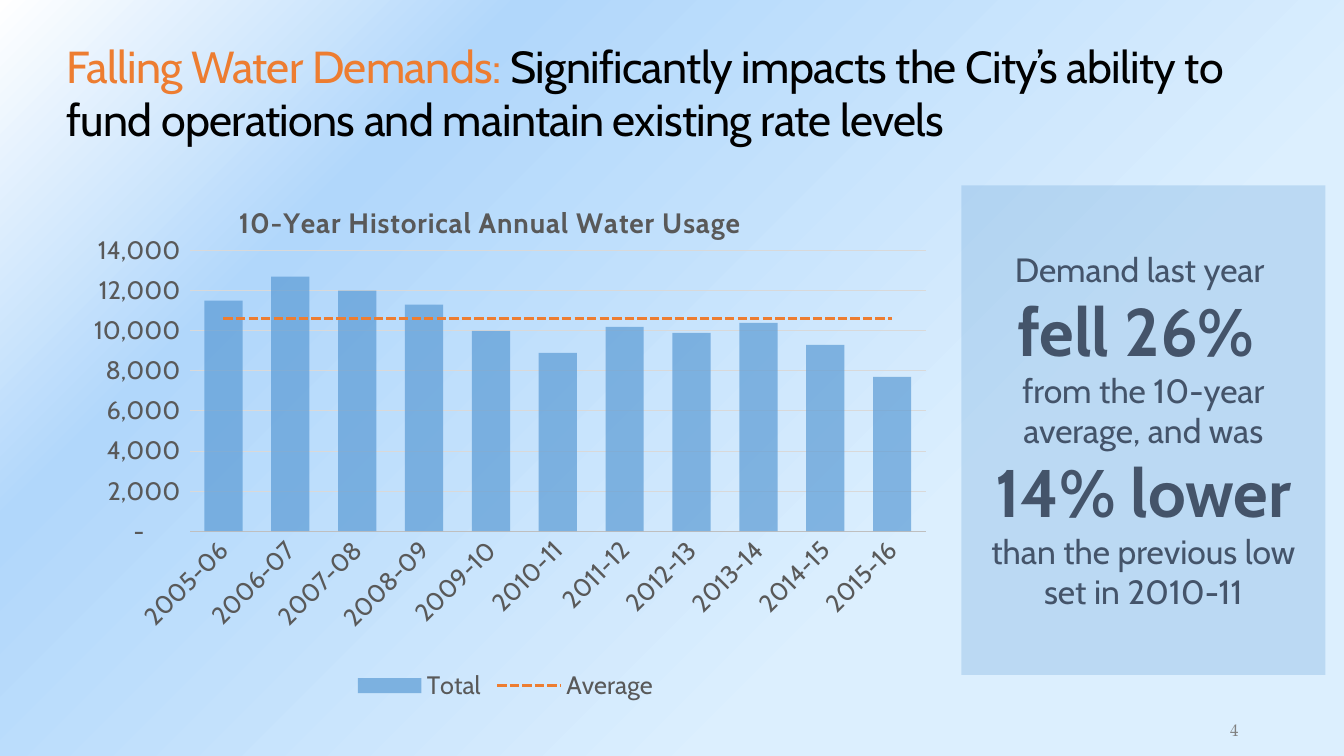
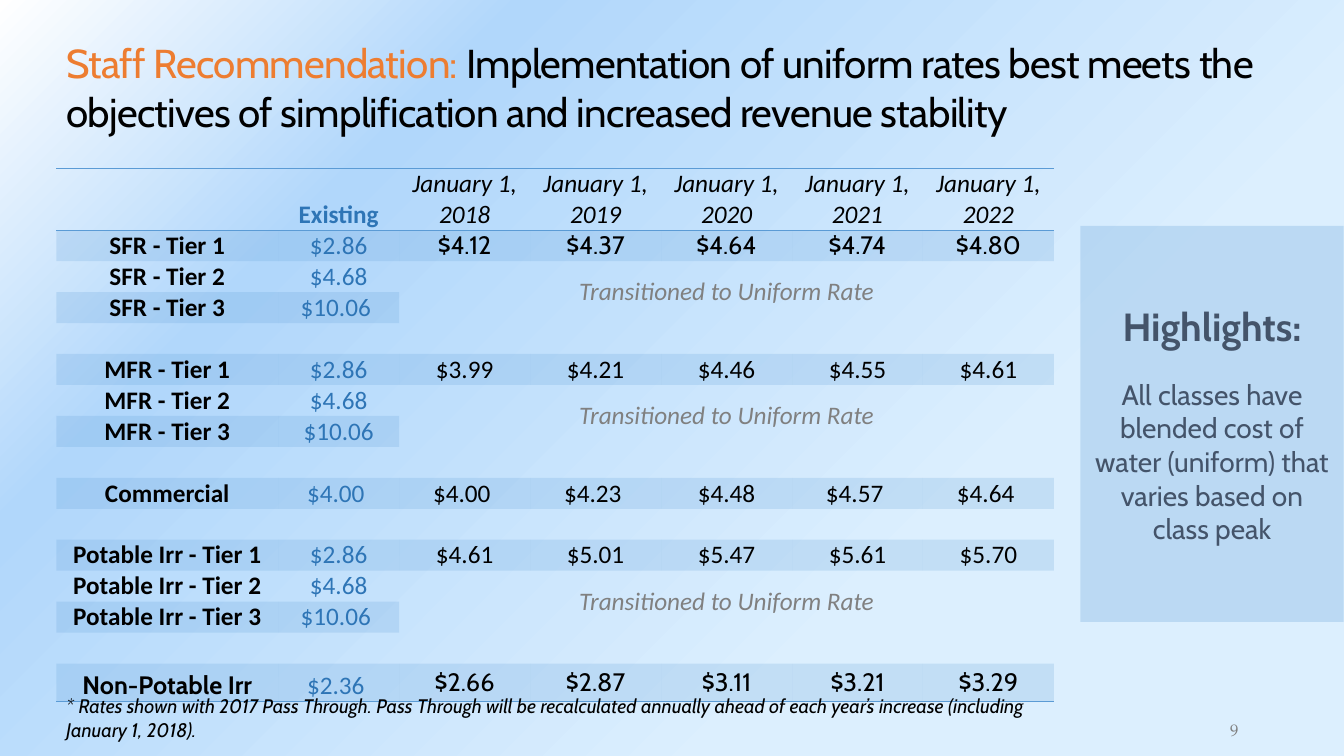
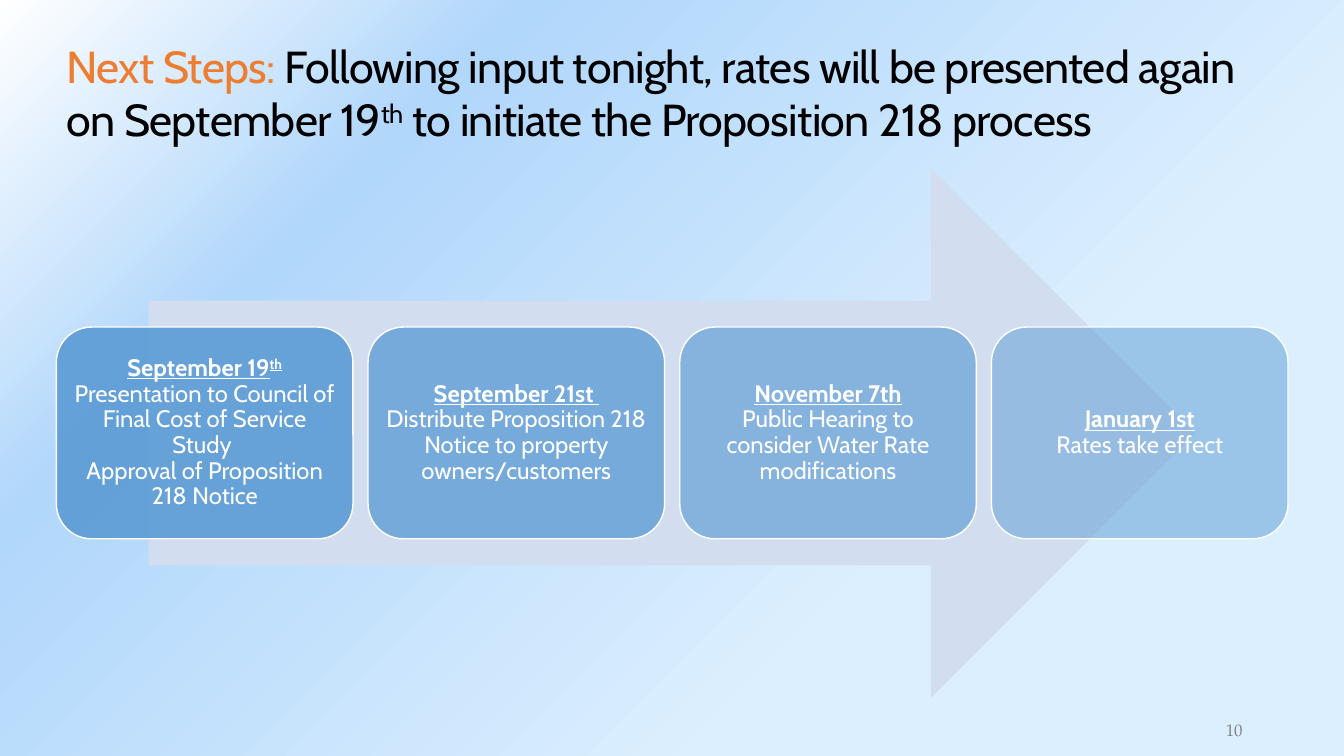
import pptx
import pptx.chart.data
import pptx.dml.color
import pptx.enum.chart
import pptx.enum.dml
import pptx.enum.shapes
import pptx.enum.text
import pptx.oxml
import pptx.oxml.ns
import pptx.util

Cm = pptx.util.Cm
Pt = pptx.util.Pt
ALIGN = pptx.enum.text.PP_ALIGN
ANCHOR = pptx.enum.text.MSO_ANCHOR
SHAPE = pptx.enum.shapes.MSO_SHAPE
CHART = pptx.enum.chart

FONT = "Cabin"
TABLE_FONT = "Calibri"
NUMBER_FONT = "TeX Gyre Pagella"
BLACK, WHITE, GRAY = "000000", "FFFFFF", "808080"
ORANGE, BLUE, DEEP_BLUE = "ED7D31", "5B9BD5", "2E75B6"
SLATE, CHART_GRAY, ARROW_BLUE = "44546A", "595959", "D2DEEF"
BACKGROUND_STOPS = [(30, "DCEFFE"), (75, "B1D7FB"), (100, WHITE)]
NO_GRID_STYLE = "{2D5ABB26-0587-4C30-8999-92F81FD0307C}"
TITLE_BOX = (1.42, 0.84, 31.04, 2.97)
NUMBER_BOX = (29.95, 18.01, 2.31, 0.76)

USAGE = {
    "2005-06": 11500, "2006-07": 12700, "2007-08": 12000, "2008-09": 11300,
    "2009-10": 10000, "2010-11": 8900, "2011-12": 10200, "2012-13": 9900,
    "2013-14": 10400, "2014-15": 9300, "2015-16": 7700,
}
AVERAGE_USAGE = 10600

UNIFORM = ["Transitioned to Uniform Rate"]
RATES = [
    ["", "Existing"] + [f"January 1, {year}" for year in range(2018, 2023)],
    ["SFR - Tier 1", " $2.86 ", " $4.12 ", " $4.37 ", " $4.64 ", " $4.74 ", " $4.80 "],
    ["SFR - Tier 2", " $4.68 "] + UNIFORM,
    ["SFR - Tier 3", "$10.06 "],
    [],
    ["MFR - Tier 1", " $2.86 ", " $3.99 ", " $4.21 ", " $4.46 ", " $4.55 ", " $4.61 "],
    ["MFR - Tier 2", " $4.68 "] + UNIFORM,
    ["MFR - Tier 3", " $10.06 "],
    [],
    ["Commercial", "$4.00 ", "$4.00 ", "$4.23 ", "$4.48", "$4.57 ", "$4.64 "],
    [],
    ["Potable Irr - Tier 1", " $2.86 ", " $4.61 ", " $5.01 ", " $5.47 ", " $5.61 ", " $5.70 "],
    ["Potable Irr - Tier 2", " $4.68 "] + UNIFORM,
    ["Potable Irr - Tier 3", "$10.06 "],
    [],
    ["Non-Potable Irr", "$2.36 ", "$2.66", "$2.87", "$3.11", "$3.21", "$3.29"],
]

STEPS = [
    (["September 19", "th"],
     ["Presentation to Council of Final Cost of Service Study ",
      "Approval of Proposition 218 Notice"]),
    (["September 21st "], ["Distribute Proposition 218 Notice to property owners/customers"]),
    (["November 7th"], ["Public Hearing to consider Water Rate modifications"]),
    (["January 1st"], ["Rates take effect"]),
]


def rgb(value):
    return pptx.dml.color.RGBColor.from_string(value)


def parse(xml):
    return pptx.oxml.parse_xml(xml)


def place(box):
    return [Cm(length) for length in box]


def set_fill(fill, owner, color, opacity=100):
    """Fill solid; owner is the XML element that holds the fill."""
    fill.solid()
    fill.fore_color.rgb = rgb(color)
    if opacity < 100:
        alpha = parse(f'<a:alpha {pptx.oxml.ns.nsdecls("a")} val="{round(opacity * 1000)}"/>')
        owner.xpath("./a:solidFill/a:srgbClr")[0].append(alpha)


def style_font(font, size, color, name=FONT, bold=False, italic=False):
    font.name, font.size, font.bold, font.italic = name, Pt(size), bold, italic
    font.color.rgb = rgb(color)


def add_run(paragraph, text, size, color, raised=False, **style):
    run = paragraph.add_run()
    run.text = text
    style_font(run.font, size, color, **style)
    if raised:
        run.font._element.set("baseline", "30000")
    return run


def set_margins(target, margin):
    target.margin_left = target.margin_right = Cm(margin)
    target.margin_top = target.margin_bottom = Cm(margin)


def add_plain_shape(slide, kind, box, color, opacity=100):
    shape = slide.shapes.add_shape(kind, *place(box))
    shape.shadow.inherit = False
    set_fill(shape.fill, shape.element.spPr, color, opacity)
    shape.line.fill.background()
    return shape


def add_text_box(slide, box, text, size, color, **style):
    frame = slide.shapes.add_textbox(*place(box)).text_frame
    frame.word_wrap = True
    frame.text = text
    style_font(frame.paragraphs[0].runs[0].font, size, color, **style)
    return frame


def set_background(master):
    master.background.fill.gradient()
    gradient = master.element.xpath("./p:cSld/p:bg//a:gradFill")[0]
    for child in list(gradient):
        gradient.remove(child)
    stops = "".join(f'<a:gs pos="{position * 1000}"><a:srgbClr val="{color}"/></a:gs>'
                    for position, color in BACKGROUND_STOPS)
    namespace = pptx.oxml.ns.nsdecls("a")
    gradient.append(parse(f"<a:gsLst {namespace}>{stops}</a:gsLst>"))
    gradient.append(parse(f'<a:path {namespace} path="circle">'
                          '<a:fillToRect l="100000" t="100000"/></a:path>'))


def add_titled_slide(presentation, number, topic, message, size=32):
    """Add a slide with an orange topic, a black message and its number.

    The message is a list of texts; every second one is superscript.
    """
    slide = presentation.slides.add_slide(presentation.slide_layouts[5])
    title = slide.shapes.title
    title.left, title.top, title.width, title.height = place(TITLE_BOX)
    frame = title.text_frame
    frame.word_wrap = True
    frame.auto_size = pptx.enum.text.MSO_AUTO_SIZE.NONE
    frame.vertical_anchor = ANCHOR.TOP
    paragraph = frame.paragraphs[0]
    paragraph.alignment = ALIGN.LEFT
    runs = [add_run(paragraph, topic, size, ORANGE)]
    for index, text in enumerate(message):
        runs.append(add_run(paragraph, text, size, BLACK, raised=index % 2 == 1))
    for run in runs:
        run.font._element.set("spc", "-50")

    frame = add_text_box(slide, NUMBER_BOX, str(number), 12, GRAY, name=NUMBER_FONT)
    frame.vertical_anchor = ANCHOR.BOTTOM
    set_margins(frame, 0.13)
    frame.paragraphs[0].alignment = ALIGN.CENTER
    return slide


def add_panel(slide, box, paragraphs, gap=0):
    """Add a tinted panel; each paragraph is a list of (text, size, bold)."""
    panel = add_plain_shape(slide, SHAPE.RECTANGLE, box, BLUE, 25)
    frame = panel.text_frame
    frame.word_wrap = True
    frame.vertical_anchor = ANCHOR.MIDDLE
    for index, runs in enumerate(paragraphs):
        paragraph = frame.add_paragraph() if index else frame.paragraphs[0]
        paragraph.alignment = ALIGN.CENTER
        if index:
            paragraph.space_before = Pt(gap)
        for text, size, bold in runs:
            add_run(paragraph, text, size, SLATE, bold=bold)


def manual_layout(left, top, width=None, height=None):
    """Build a chart layout from fractions of the chart's size."""
    parts = ""
    if width:
        parts += '<c:layoutTarget val="inner"/>'
    parts += '<c:xMode val="edge"/><c:yMode val="edge"/>'
    for tag, value in zip("xywh", (left, top, width, height)):
        if value:
            parts += f'<c:{tag} val="{value}"/>'
    return parse(f'<c:layout {pptx.oxml.ns.nsdecls("c")}>'
                 f"<c:manualLayout>{parts}</c:manualLayout></c:layout>")


def move_last_series_to_line(chart):
    bars = chart.plots[0]._element
    series = bars.xpath("./c:ser")[-1]
    for element in series.xpath("./c:invertIfNegative"):
        series.remove(element)
    line = parse(f'<c:lineChart {pptx.oxml.ns.nsdecls("c")}><c:grouping val="standard"/>'
                 '<c:varyColors val="0"/><c:marker val="1"/></c:lineChart>')
    line.insert(2, series)
    for axis in bars.xpath("./c:axId"):
        line.append(parse(f'<c:axId {pptx.oxml.ns.nsdecls("c")} val="{axis.get("val")}"/>'))
    bars.addnext(line)


def add_usage_chart(slide, box):
    data = pptx.chart.data.CategoryChartData(number_format="#,##0")
    data.categories = list(USAGE)
    data.add_series("Total", list(USAGE.values()))
    data.add_series("Average", [AVERAGE_USAGE] * len(USAGE))
    chart = slide.shapes.add_chart(
        CHART.XL_CHART_TYPE.COLUMN_CLUSTERED, *place(box), data).chart
    style_font(chart.font, 18, CHART_GRAY)

    chart.has_title = True
    chart.chart_title.text_frame.text = "10-Year Historical Annual Water Usage"
    title_font = chart.chart_title.text_frame.paragraphs[0].runs[0].font
    style_font(title_font, 20, CHART_GRAY, bold=True)
    title_font._element.set("spc", "50")
    title = chart.chart_title._element
    plot_area = chart.plots[0]._element.getparent()
    for parent in (title, plot_area):
        for layout in parent.xpath("./c:layout"):
            parent.remove(layout)
    title.xpath("./c:tx")[0].addnext(manual_layout(0.19, 0.04))
    plot_area.insert(0, manual_layout(0.14, 0.14, 0.84, 0.53))

    chart.has_legend = True
    chart.legend.position = CHART.XL_LEGEND_POSITION.BOTTOM
    chart.legend.include_in_layout = False
    style_font(chart.legend.font, 18, CHART_GRAY)

    for axis in (chart.category_axis, chart.value_axis):
        axis.major_tick_mark = axis.minor_tick_mark = CHART.XL_TICK_MARK.NONE
        style_font(axis.tick_labels.font, 18, CHART_GRAY)
    chart.category_axis._element.xpath("./c:txPr/a:bodyPr")[0].set("rot", "-2700000")
    chart.category_axis.format.line.color.rgb = rgb("BFBFBF")
    chart.category_axis.format.line.width = Pt(0.75)
    values = chart.value_axis
    values.minimum_scale, values.maximum_scale, values.major_unit = 0, 14000, 2000
    values.tick_labels.number_format = '_(* #,##0_);_(* \\(#,##0\\);_(* "-"??_);_(@_)'
    values.tick_labels.number_format_is_linked = False
    values.format.line.fill.background()
    values.major_gridlines.format.line.color.rgb = rgb("D9D9D9")
    values.major_gridlines.format.line.width = Pt(0.75)

    move_last_series_to_line(chart)
    bars, lines = chart.plots
    bars.gap_width = 75
    bars.vary_by_categories = False
    total, average = bars.series[0], lines.series[0]
    set_fill(total.format.fill, total._element.get_or_add_spPr(), BLUE, 70)
    average.smooth = False
    average.marker.style = CHART.XL_MARKER_STYLE.NONE
    average.format.line.color.rgb = rgb(ORANGE)
    average.format.line.width = Pt(2.25)
    average.format.line.dash_style = pptx.enum.dml.MSO_LINE.SQUARE_DOT


def add_border(cell, side):
    """Rule one side of a cell: T or B."""
    cell._tc.get_or_add_tcPr().append(parse(
        f'<a:ln{side} {pptx.oxml.ns.nsdecls("a")} w="12700"><a:solidFill>'
        f'<a:srgbClr val="{BLUE}"/></a:solidFill></a:ln{side}>'))


def rate_style(row, column, last):
    """Colour and font settings for one cell's text."""
    if RATES[row][column:] == UNIFORM:
        return {"color": GRAY, "name": TABLE_FONT, "italic": True}
    wide = (row == last and column != 1) or (row == 1 and column > 1)
    return {
        "color": DEEP_BLUE if column == 1 else BLACK,
        "name": FONT if wide else TABLE_FONT,
        "bold": column == 0 or (row == 0 and column == 1),
        "italic": row == 0 and column > 1,
    }


def add_rate_table(slide, left, top):
    widths = [5.59, 3.05] + [3.3] * 5
    last = len(RATES) - 1
    heights = [1.56] + [0.78] * (last - 1) + [0.95]
    frame = slide.shapes.add_table(
        len(RATES), len(widths), *place((left, top, sum(widths), sum(heights))))
    frame.element.xpath(".//a:tableStyleId")[0].text = NO_GRID_STYLE
    table = frame.table
    table.first_row = table.horz_banding = False
    for column, width in enumerate(widths):
        table.columns[column].width = Cm(width)
    for row, texts in enumerate(RATES):
        table.rows[row].height = Cm(heights[row])
        merged = texts[2:] == UNIFORM
        for column in range(len(widths)):
            cell = table.cell(row, column)
            set_margins(cell, 0)
            middle = column > 1 and (merged or row == last)
            cell.vertical_anchor = ANCHOR.MIDDLE if middle else ANCHOR.BOTTOM
            if row == 0:
                add_border(cell, "T")
            if row in (0, last):
                add_border(cell, "B")
            if row % 2:
                set_fill(cell.fill, cell._tc.tcPr, BLUE, 20)
            else:
                cell.fill.background()
            if column < len(texts) and texts[column]:
                cell.text = texts[column]
                paragraph = cell.text_frame.paragraphs[0]
                paragraph.alignment = ALIGN.CENTER
                style_font(paragraph.runs[0].font, 18, **rate_style(row, column, last))
        if merged:
            table.cell(row, 2).merge(table.cell(row + 1, len(widths) - 1))


def add_step_card(slide, box, opacity, heading, details):
    card = add_plain_shape(slide, SHAPE.ROUNDED_RECTANGLE, box, BLUE, opacity)
    card.line.color.rgb = rgb(WHITE)
    card.line.width = Pt(1)
    frame = card.text_frame
    frame.word_wrap = True
    frame.vertical_anchor = ANCHOR.MIDDLE
    set_margins(frame, 0.18)
    for index, text in enumerate(heading):
        run = add_run(frame.paragraphs[0], text, 17, WHITE, raised=index == 1, bold=True)
        run.font.underline = True
    for text in details:
        add_run(frame.add_paragraph(), text, 17, WHITE)
    for paragraph in frame.paragraphs:
        paragraph.alignment = ALIGN.CENTER
        paragraph.line_spacing = 0.9


def add_timeline(slide, left, top, width, height):
    """Add a wide arrow with evenly spaced step cards across its middle."""
    gap = 0.38
    card_width = (width - gap * (len(STEPS) - 1)) / len(STEPS)
    card_height = height * 0.4
    add_plain_shape(slide, SHAPE.RIGHT_ARROW,
                    (left + width * 0.075, top, width * 0.85, height), ARROW_BLUE)
    for index, (heading, details) in enumerate(STEPS):
        box = (left + index * (card_width + gap), top + height * 0.3, card_width, card_height)
        opacity = 90 - 40 * index / (len(STEPS) - 1)
        add_step_card(slide, box, opacity, heading, details)


def build_demand_slide(presentation):
    slide = add_titled_slide(
        presentation, 4, "Falling Water Demands:",
        [" Significantly impacts the City’s ability to fund operations"
         " and maintain existing rate levels"])
    add_usage_chart(slide, (1.7, 4.45, 22.07, 13.34))
    add_panel(slide, (24.23, 4.67, 9.17, 12.34), [
        [("Demand last year ", 24, False)],
        [("fell 26% ", 48, True)],
        [("from the 10-year average, and was", 24, False)],
        [("14% lower ", 48, True), ("than the previous low set in 2010-11", 24, False)],
    ])


def build_rates_slide(presentation):
    slide = add_titled_slide(
        presentation, 9, "Staff Recommendation:",
        [" Implementation of uniform rates best meets the objectives of"
         " simplification and increased revenue stability"], size=28.8)
    add_rate_table(slide, 1.42, 4.24)
    add_panel(slide, (27.23, 5.69, 6.63, 9.98), [
        [("Highlights:", 28, True)],
        [("All classes have blended cost of water (uniform) that varies"
          " based on class peak", 20, False)],
    ], gap=20)
    add_text_box(
        slide, (1.42, 17.37, 24.89, 1.45),
        "* Rates shown with 2017 Pass Through. Pass Through will be recalculated annually"
        " ahead of each year’s increase (including January 1, 2018).",
        14, BLACK, italic=True)


def build_next_steps_slide(presentation):
    slide = add_titled_slide(
        presentation, 10, "Next Steps: ",
        ["Following input tonight, rates will be presented again on September 19", "th",
         " to initiate the Proposition 218 process"])
    add_timeline(slide, 1.42, 4.24, 31.04, 13.34)


def main():
    presentation = pptx.Presentation()
    presentation.slide_width, presentation.slide_height = Cm(33.87), Cm(19.05)
    set_background(presentation.slide_master)
    build_demand_slide(presentation)
    build_rates_slide(presentation)
    build_next_steps_slide(presentation)
    presentation.save("out.pptx")


if __name__ == "__main__":
    main()
